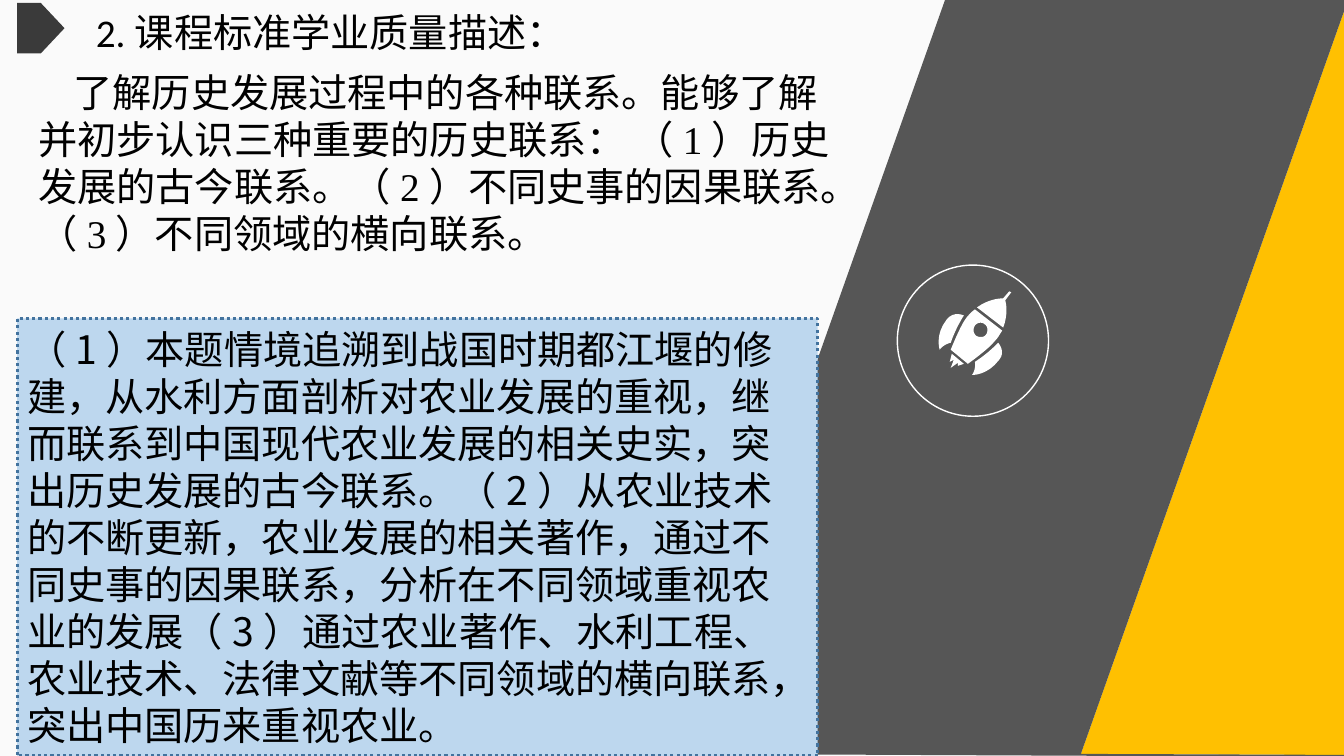
"""Build the slide on the curriculum standard's quality description."""
from dataclasses import dataclass
from itertools import groupby

from lxml import etree
from pptx import Presentation
from pptx.dml.color import RGBColor
from pptx.enum.dml import MSO_LINE
from pptx.enum.shapes import MSO_SHAPE
from pptx.enum.text import MSO_ANCHOR, MSO_AUTO_SIZE, PP_ALIGN
from pptx.oxml.ns import qn
from pptx.util import Inches, Pt

ELLIPSE, PENTAGON, RECTANGLE = MSO_SHAPE.OVAL, MSO_SHAPE.PENTAGON, MSO_SHAPE.RECTANGLE
DOTTED = MSO_LINE.ROUND_DOT
LEFT, TOP, MIDDLE = PP_ALIGN.LEFT, MSO_ANCHOR.TOP, MSO_ANCHOR.MIDDLE
NO_AUTOFIT = MSO_AUTO_SIZE.NONE
HAN_FONT, TITLE_FONT, DIGIT_FONT = "Noto Sans CJK SC", "Calibri", "Times New Roman"
FONT_SIZE, LINE_PITCH = 28, 33.6
CURVE_STEPS = 8

TITLE = "2.课程标准学业质量描述："
STANDARD = (
    "了解历史发展过程中的各种联系。能够了解并初步认识三种重要的历史联系： "
    "（1）历史发展的古今联系。（2）不同史事的因果联系。（3）不同领域的横向联系。"
)
ANALYSIS = (
    "（1）本题情境追溯到战国时期都江堰的修建，从水利方面剖析对农业发展的重视，"
    "继而联系到中国现代农业发展的相关史实，突出历史发展的古今联系。"
    "（2）从农业技术的不断更新，农业发展的相关著作，通过不同史事的因果联系，"
    "分析在不同领域重视农业的发展（3）通过农业著作、水利工程、农业技术、"
    "法律文献等不同领域的横向联系，突出中国历来重视农业。"
)


@dataclass(frozen=True)
class Box:
    """Position and size in inches."""
    left: float
    top: float
    width: float
    height: float


@dataclass(frozen=True)
class PresetShape:
    """A preset shape with its fill and outline."""
    kind: int
    box: Box
    fill: str | None = None
    line: str | None = None
    line_width: float = 1


@dataclass(frozen=True)
class Outline:
    """Filled contours; a step holds a line end or two controls and a curve end."""
    fill: str
    contours: list


BANDS = [
    Outline("FFC001", [[(13.37, 0), (13.41, 0), (13.41, 7.49), (10.72, 7.48)]]),
    Outline("565656", [[(9.38, -0.02), (13.37, 0), (10.72, 7.48), (13.41, 7.49),
                        (13.41, 7.51), (6.72, 7.48)]]),
]
ROCKET = Outline("FFFFFF", [
    [(9.64, 3.72), (9.64, 3.72, 9.68, 3.68, 9.67, 3.59),
     (9.81, 3.5, 9.9, 3.4, 9.9, 3.4), (9.9, 3.4, 9.98, 3.49, 9.91, 3.57),
     (9.79, 3.73, 9.64, 3.72, 9.64, 3.72)],
    [(9.43, 3.47), (9.43, 3.47, 9.52, 3.24, 9.58, 3.16),
     (9.61, 3.12, 9.64, 3.09, 9.67, 3.07), (9.94, 3.28),
     (9.92, 3.31, 9.9, 3.35, 9.87, 3.38), (9.81, 3.46, 9.6, 3.61, 9.6, 3.61)],
    [(9.77, 3.22), (9.74, 3.19, 9.69, 3.2, 9.67, 3.23),
     (9.65, 3.26, 9.65, 3.3, 9.68, 3.33), (9.71, 3.35, 9.76, 3.35, 9.78, 3.32),
     (9.8, 3.29, 9.8, 3.24, 9.77, 3.22)],
    [(9.95, 2.96), (10.01, 2.89), (10.03, 2.9), (9.97, 2.98),
     (9.98, 3.01, 10, 3.12, 9.95, 3.25), (9.69, 3.05),
     (9.8, 2.97, 9.91, 2.96, 9.95, 2.96)],
    [(9.32, 3.47), (9.32, 3.47, 9.27, 3.32, 9.39, 3.17),
     (9.46, 3.08, 9.56, 3.13, 9.56, 3.13), (9.56, 3.13, 9.48, 3.25, 9.43, 3.4),
     (9.35, 3.42, 9.32, 3.47, 9.32, 3.47)],
    [(9.5, 3.63), (9.5, 3.6), (9.43, 3.65), (9.46, 3.57), (9.42, 3.59),
     (9.44, 3.51), (9.56, 3.61)],
])
CIRCLE = PresetShape(ELLIPSE, Box(8.9, 2.63, 1.5, 1.5), line="FFFFFF")
MARKER = PresetShape(PENTAGON, Box(0.17, 0.03, 0.47, 0.5), fill="3A3A3A")
PANEL = PresetShape(RECTANGLE, Box(0.17, 3.16, 7.94, 4.34), "BDD7EE", "43739E", 2.25)


def color(value: str) -> RGBColor:
    """Turn a hex string into a colour."""
    return RGBColor.from_string(value)


def paint(shape, fill: str | None, line: str | None = None, width: float = 1) -> None:
    """Set fill and outline and drop the shadow."""
    shape.shadow.inherit = False
    if fill:
        shape.fill.solid()
        shape.fill.fore_color.rgb = color(fill)
    else:
        shape.fill.background()
    if line:
        shape.line.color.rgb = color(line)
        shape.line.width = Pt(width)
    else:
        shape.line.fill.background()


def flatten(contour: list) -> list:
    """Return the points of a contour with its curves cut into short lines."""
    points = [contour[0]]
    for step in contour[1:]:
        if len(step) == 2:
            points.append(step)
            continue
        corners = [points[-1], step[:2], step[2:4], step[4:]]
        for index in range(1, CURVE_STEPS + 1):
            t = index / CURVE_STEPS
            weights = ((1 - t) ** 3, 3 * t * (1 - t) ** 2, 3 * t * t * (1 - t), t ** 3)
            points.append(tuple(
                sum(weight * corner[axis] for weight, corner in zip(weights, corners))
                for axis in (0, 1)))
    return [(Inches(x), Inches(y)) for x, y in points]


def draw_outline(slide, outline: Outline) -> None:
    """Draw all contours as one freeform."""
    contours = [flatten(contour) for contour in outline.contours]
    builder = slide.shapes.build_freeform(*contours[0][0])
    for number, points in enumerate(contours):
        if number:
            builder.move_to(*points[0])
        builder.add_line_segments(points[1:], close=True)
    paint(builder.convert_to_shape(), outline.fill)


def draw_preset(slide, preset: PresetShape):
    """Draw a preset shape and return it."""
    shape = slide.shapes.add_shape(preset.kind, 0, 0, 0, 0)
    place(shape, preset.box)
    paint(shape, preset.fill, preset.line, preset.line_width)
    return shape


def place(shape, box: Box) -> None:
    """Move and size a shape."""
    shape.left, shape.top = Inches(box.left), Inches(box.top)
    shape.width, shape.height = Inches(box.width), Inches(box.height)


def write(shape, text: str, font: str = HAN_FONT, digit_font: str | None = None,
          anchor=TOP, margin_left: float = 0.1, indent: float = 0) -> None:
    """Write one left-aligned paragraph, with digits in their own font if given."""
    frame = shape.text_frame
    frame.word_wrap, frame.auto_size = True, NO_AUTOFIT
    frame.vertical_anchor = anchor
    frame.margin_left = Inches(margin_left)
    paragraph = frame.paragraphs[0]
    paragraph.alignment = LEFT
    paragraph.line_spacing = Pt(LINE_PITCH)
    paragraph.space_before = Pt(0)
    properties = paragraph._p.get_or_add_pPr()
    properties.set("marL", "0")
    properties.set("indent", str(Inches(indent)))
    etree.SubElement(properties, qn("a:buNone"))
    for is_digit, letters in groupby(text, lambda letter: bool(digit_font) and letter.isdigit()):
        run = paragraph.add_run()
        run.text = "".join(letters)
        run.font.name = digit_font if is_digit else font
        run.font.size = Pt(FONT_SIZE)
        run.font.color.rgb = color("000000")
        etree.SubElement(run._r.get_or_add_rPr(), qn("a:ea")).set("typeface", HAN_FONT)


def main() -> None:
    """Build and save the presentation."""
    presentation = Presentation()
    presentation.slide_width, presentation.slide_height = Inches(13.33), Inches(7.5)
    slide = presentation.slides.add_slide(presentation.slide_layouts[1])
    slide.background.fill.solid()
    slide.background.fill.fore_color.rgb = color("FAFAFA")

    for outline in (*BANDS, ROCKET):
        draw_outline(slide, outline)
    draw_preset(slide, CIRCLE)
    draw_preset(slide, MARKER)

    title, body = slide.placeholders
    place(title, Box(0.17, 0.03, 5.5, 0.57))
    write(title, TITLE, font=TITLE_FONT, margin_left=0.78)
    title.text_frame.margin_right = 0
    place(body, Box(0.28, 0.63, 8.12, 1.98))
    write(body, STANDARD, digit_font=DIGIT_FONT, indent=0.35)

    panel = draw_preset(slide, PANEL)
    panel.line.dash_style = DOTTED
    write(panel, ANALYSIS, anchor=MIDDLE)
    presentation.save("out.pptx")


if __name__ == "__main__":
    main()
